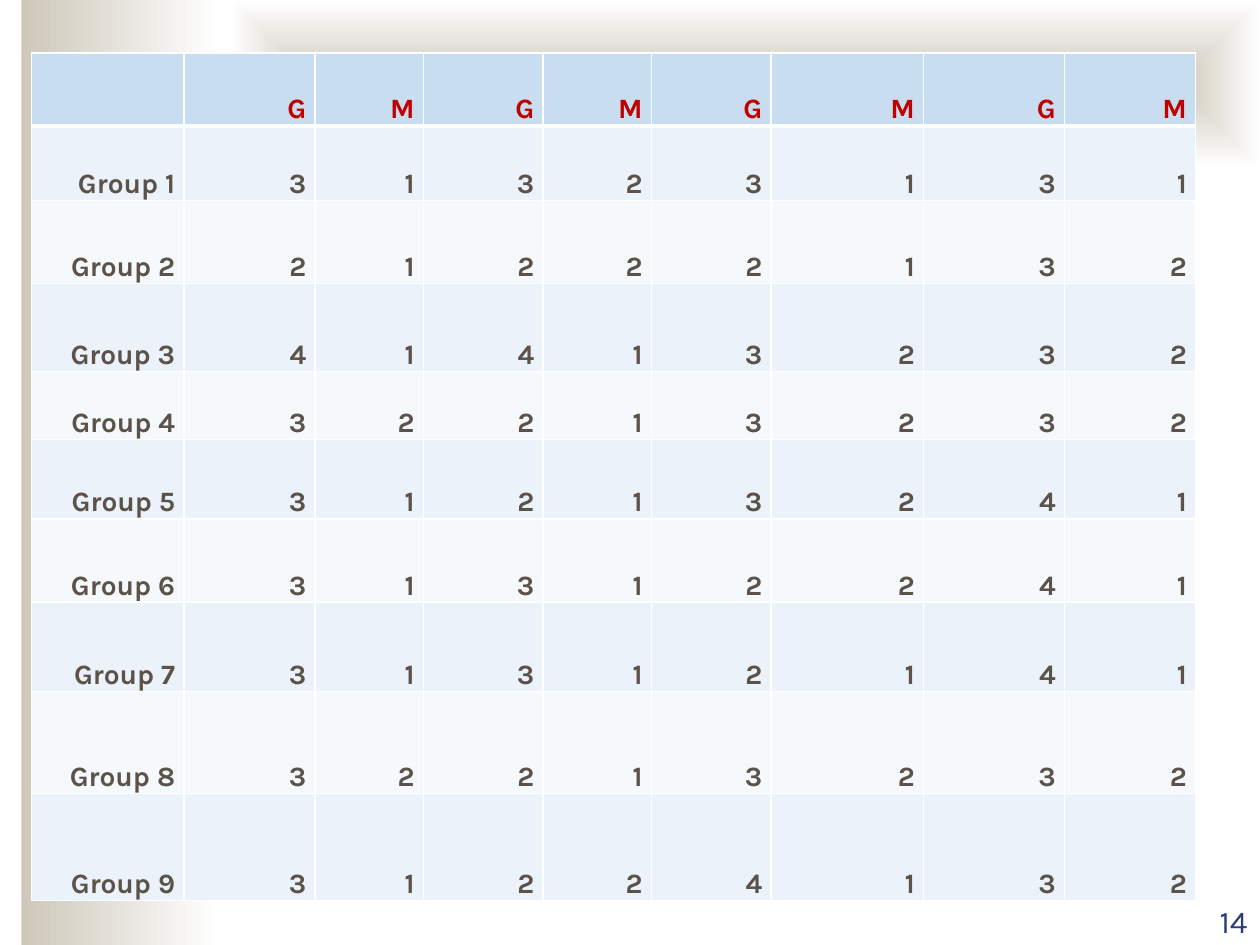
from lxml.etree import SubElement
from pptx import Presentation
from pptx.dml.color import RGBColor
from pptx.enum.shapes import MSO_SHAPE
from pptx.enum.text import MSO_ANCHOR, PP_ALIGN
from pptx.oxml import parse_xml
from pptx.oxml.ns import nsdecls, qn
from pptx.util import Inches, Pt

WIDE, HIGH = 10, 7.5
FONT = "Karla"
SAND, WHITE, NAVY = "CEC8BA", "FFFFFF", "2A3D7A"
HEAD, BANDS = "C9DDF1", ("EBF2FA", "F5F9FC")
RED, BROWN = "C00000", "5B5249"

COLS = [1.21, 1.04, 0.86, 0.95, 0.86, 0.95, 1.21, 1.12, 1.04]
ROWS = [0.58, 0.59, 0.66, 0.7, 0.54, 0.63, 0.66, 0.71, 0.81, 0.85]
SCORES = ["31323131", "21222132", "41413232", "32213232", "31213241",
          "31312241", "31312141", "32213232", "31224132"]


def color(code):
    return RGBColor.from_string(code)


def style(par, size, code, bold=False):
    par.alignment = PP_ALIGN.RIGHT
    par.font.name = FONT
    par.font.size = Pt(size)
    par.font.bold = bold
    par.font.color.rgb = color(code)


def fade(slide, box, center=False):
    """Sand to white, from the left edge or from the center outward."""
    shape = slide.shapes.add_shape(MSO_SHAPE.RECTANGLE, *map(Inches, box))
    shape.shadow.inherit = False
    shape.line.fill.background()
    fill = shape.fill
    fill.gradient()
    fill.gradient_angle = 0
    for stop, code in zip(fill.gradient_stops, (SAND, WHITE)):
        stop.color.rgb = color(code)
    if center:
        line = shape.element.spPr.find(f".//{qn('a:lin')}")
        line.getparent().replace(line, parse_xml(
            f'<a:path {nsdecls("a")} path="shape"><a:fillToRect '
            'l="50000" t="50000" r="50000" b="50000"/></a:path>'))


def edge(cell, **sides):
    """White cell borders, with widths in points."""
    props = cell._tc.get_or_add_tcPr()
    for side, width in sides.items():
        line = SubElement(props, qn(f"a:ln{side}"), w=str(Pt(width)))
        fill = SubElement(line, qn("a:solidFill"))
        SubElement(fill, qn("a:srgbClr"), val=WHITE)


def backdrop(slide):
    fade(slide, (0.17, 0, 1.58, HIGH))
    fade(slide, (1.83, 0, WIDE - 1.83, 1.33), center=True)


def scores(slide, left, top):
    data = [["", *"GM" * 4]]
    data += [[f"Group {n}", *row] for n, row in enumerate(SCORES, 1)]
    box = map(Inches, (left, top, sum(COLS), sum(ROWS)))
    table = slide.shapes.add_table(len(ROWS), len(COLS), *box).table
    table.horz_banding = False
    for col, width in zip(table.columns, COLS):
        col.width = Inches(width)

    for r, (row, height) in enumerate(zip(table.rows, ROWS)):
        row.height = Inches(height)
        for cell, text in zip(row.cells, data[r]):
            # A thick rule parts the header from the groups
            edge(cell, L=1, R=1, T=3 if r == 1 else 1, B=1 if r else 3)
            cell.fill.solid()
            cell.fill.fore_color.rgb = color(BANDS[(r - 1) % 2] if r else HEAD)
            cell.margin_left = cell.margin_right = Inches(0.07)
            cell.margin_top = cell.margin_bottom = 0
            cell.vertical_anchor = MSO_ANCHOR.BOTTOM
            cell.text = text
            style(cell.text_frame.paragraphs[0], 16, BROWN if r else RED, True)


def number(slide, text):
    box = map(Inches, (WIDE - 1, 7.01, 1, 0.5))
    frame = slide.shapes.add_textbox(*box).text_frame
    frame.word_wrap = True
    frame.vertical_anchor = MSO_ANCHOR.BOTTOM
    frame.text = text
    style(frame.paragraphs[0], 18, NAVY)


def main():
    deck = Presentation()
    deck.slide_width, deck.slide_height = Inches(WIDE), Inches(HIGH)
    slide = deck.slides.add_slide(deck.slide_layouts[6])
    backdrop(slide)
    number(slide, "14")
    scores(slide, 0.25, 0.42)
    deck.save("out.pptx")


if __name__ == "__main__":
    main()
